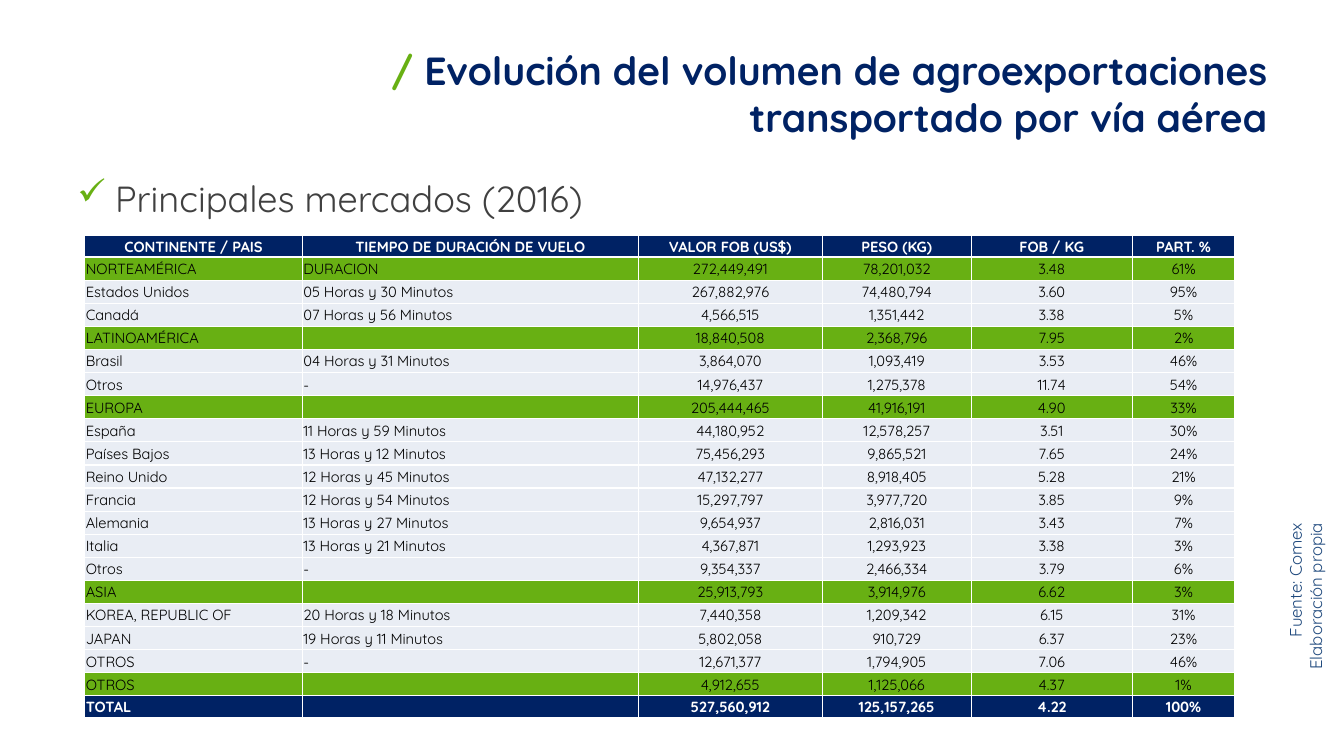
from dataclasses import dataclass

from lxml.etree import SubElement
from pptx import Presentation
from pptx.dml.color import RGBColor
from pptx.enum.text import MSO_ANCHOR, PP_ALIGN
from pptx.oxml.ns import qn
from pptx.util import Pt


@dataclass(frozen=True)
class Theme:
    font: str = "Quicksand"
    navy: str = "002264"
    green: str = "68B013"
    pale: str = "E9EDF4"
    white: str = "FFFFFF"
    black: str = "000000"
    gray: str = "404040"
    blue: str = "1F497D"
    title_size: float = 28
    subtitle_size: float = 25.9
    source_size: float = 12
    table_size: float = 10.5


theme = Theme()


def add_text_box(left, top, width, height):
    shape = slide.shapes.add_textbox(Pt(left), Pt(top), Pt(width), Pt(height))
    shape.text_frame.word_wrap = True
    return shape


def style_runs(paragraph, size, color, bold=False):
    for run in paragraph.runs:
        run.font.name = theme.font
        run.font.size = Pt(size)
        run.font.bold = bold
        run.font.color.rgb = RGBColor.from_string(color)


presentation = Presentation()
presentation.slide_width = Pt(960)
presentation.slide_height = Pt(540)
slide = presentation.slides.add_slide(presentation.slide_layouts[6])

# Title with a green slash
title = add_text_box(253.4, 21.6, 658.8, 90)
title.text_frame.vertical_anchor = MSO_ANCHOR.MIDDLE
paragraph = title.text_frame.paragraphs[0]
paragraph.text = "/"
paragraph.add_run().text = " Evolución del volumen de agroexportaciones transportado por vía aérea"
paragraph.alignment = PP_ALIGN.RIGHT
style_runs(paragraph, theme.title_size, theme.navy, bold=True)
paragraph.runs[0].font.color.rgb = RGBColor.from_string(theme.green)

# Subtitle with a check mark bullet
subtitle = add_text_box(48.2, 122.4, 864, 36)
paragraph = subtitle.text_frame.paragraphs[0]
paragraph.text = "Principales mercados (2016)"
properties = paragraph._p.get_or_add_pPr()
properties.set("marL", str(Pt(27)))
properties.set("indent", str(-Pt(27)))
bullet_color = SubElement(properties, qn("a:buClr"))
SubElement(bullet_color, qn("a:srgbClr"), val=theme.green)
SubElement(properties, qn("a:buChar"), char="✓")
style_runs(paragraph, theme.subtitle_size, theme.gray)

# Market table
HEADER, REGION, COUNTRY, TOTAL = "header", "region", "country", "total"
row_styles = {  # fill, text colour, bold
    HEADER: (theme.navy, theme.white, True),
    REGION: (theme.green, theme.black, False),
    COUNTRY: (theme.pale, theme.black, False),
    TOTAL: (theme.navy, theme.white, True),
}
rows = [
    (HEADER, "CONTINENTE / PAIS", "TIEMPO DE DURACIÓN DE VUELO", "VALOR FOB (US$)", "PESO (KG)", "FOB / KG", "PART. %"),
    (REGION, "NORTEAMÉRICA", "DURACION", "272,449,491", "78,201,032", "3.48", "61%"),
    (COUNTRY, "Estados Unidos", "05 Horas y 30 Minutos", "267,882,976", "74,480,794", "3.60", "95%"),
    (COUNTRY, "Canadá", "07 Horas y 56 Minutos", "4,566,515", "1,351,442", "3.38", "5%"),
    (REGION, "LATINOAMÉRICA", "", "18,840,508", "2,368,796", "7.95", "2%"),
    (COUNTRY, "Brasil", "04 Horas y 31 Minutos", "3,864,070", "1,093,419", "3.53", "46%"),
    (COUNTRY, "Otros", "-", "14,976,437", "1,275,378", "11.74", "54%"),
    (REGION, "EUROPA", "", "205,444,465", "41,916,191", "4.90", "33%"),
    (COUNTRY, "España", "11 Horas y 59 Minutos", "44,180,952", "12,578,257", "3.51", "30%"),
    (COUNTRY, "Países Bajos", "13 Horas y 12 Minutos", "75,456,293", "9,865,521", "7.65", "24%"),
    (COUNTRY, "Reino Unido", "12 Horas y 45 Minutos", "47,132,277", "8,918,405", "5.28", "21%"),
    (COUNTRY, "Francia", "12 Horas y 54 Minutos", "15,297,797", "3,977,720", "3.85", "9%"),
    (COUNTRY, "Alemania", "13 Horas y 27 Minutos", "9,654,937", "2,816,031", "3.43", "7%"),
    (COUNTRY, "Italia", "13 Horas y 21 Minutos", "4,367,871", "1,293,923", "3.38", "3%"),
    (COUNTRY, "Otros", "-", "9,354,337", "2,466,334", "3.79", "6%"),
    (REGION, "ASIA", "", "25,913,793", "3,914,976", "6.62", "3%"),
    (COUNTRY, "KOREA, REPUBLIC OF", "20 Horas y 18 Minutos", "7,440,358", "1,209,342", "6.15", "31%"),
    (COUNTRY, "JAPAN", "19 Horas y 11 Minutos", "5,802,058", "910,729", "6.37", "23%"),
    (COUNTRY, "OTROS", "-", "12,671,377", "1,794,905", "7.06", "46%"),
    (REGION, "OTROS", "", "4,912,655", "1,125,066", "4.37", "1%"),
    (TOTAL, "TOTAL", "", "527,560,912", "125,157,265", "4.22", "100%"),
]
column_widths = [155.4, 240, 131.4, 106.4, 115, 73.4]
table = slide.shapes.add_table(
    len(rows), len(column_widths), Pt(60.6), Pt(168), Pt(sum(column_widths)), Pt(344.7)
).table
for column, width in zip(table.columns, column_widths):
    column.width = Pt(width)

for row_index, (kind, *values) in enumerate(rows):
    fill, color, bold = row_styles[kind]
    table.rows[row_index].height = Pt(15.6 if kind in (HEADER, TOTAL) else 16.5)
    for column_index, value in enumerate(values):
        cell = table.cell(row_index, column_index)
        cell.vertical_anchor = MSO_ANCHOR.MIDDLE
        cell.margin_left = cell.margin_right = cell.margin_top = Pt(0.7)
        cell.margin_bottom = Pt(0)
        for side in ("a:lnL", "a:lnR", "a:lnT", "a:lnB"):
            border = SubElement(cell._tc.get_or_add_tcPr(), qn(side), w=str(Pt(1)))
            border_fill = SubElement(border, qn("a:solidFill"))
            SubElement(border_fill, qn("a:srgbClr"), val=theme.white)
        cell.fill.solid()
        cell.fill.fore_color.rgb = RGBColor.from_string(fill)
        paragraph = cell.text_frame.paragraphs[0]
        centered = kind == HEADER or column_index > 1
        paragraph.alignment = PP_ALIGN.CENTER if centered else PP_ALIGN.LEFT
        if value:
            paragraph.text = value
            style_runs(paragraph, theme.table_size, color, bold)
        else:  # keep an empty cell from stretching its row
            SubElement(paragraph._p, qn("a:endParaRPr"), sz=str(int(theme.table_size * 100)))

# Source note, turned to read upwards
source = add_text_box(853.9, 427, 157, 36)
source.rotation = 270
source.text_frame.text = "Fuente: Comex\nElaboración propia"
for paragraph in source.text_frame.paragraphs:
    paragraph.alignment = PP_ALIGN.RIGHT
    style_runs(paragraph, theme.source_size, theme.blue)

presentation.save("out.pptx")
